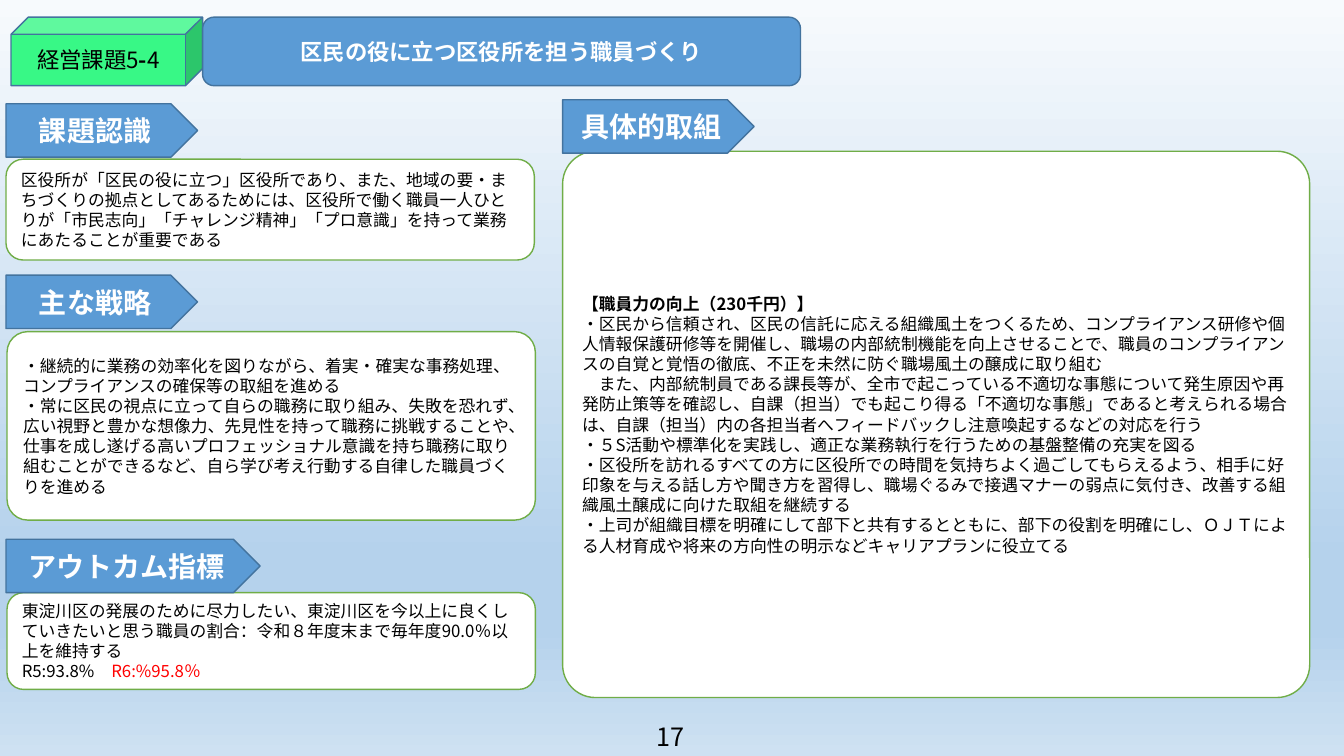
"""Build the slide on staff development at the ward office."""
from lxml import etree
from pptx import Presentation, util as u
from pptx.dml.color import RGBColor
from pptx.enum import shapes, text
from pptx.oxml.ns import qn

FONT = "Noto Sans CJK JP"
BLACK = RGBColor(0x00, 0x00, 0x00)
WHITE = RGBColor(0xFF, 0xFF, 0xFF)
RED = RGBColor(0xFF, 0x00, 0x00)
BLUE = RGBColor(0x5B, 0x9B, 0xD5)
NAVY = RGBColor(0x43, 0x73, 0x9E)
LIME = RGBColor(0x38, 0xF8, 0x86)
GREEN = RGBColor(0x70, 0xAD, 0x47)
SKY = [(0, "F7FAFD"), (74, "B5D2EC"), (83, "B5D2EC"), (100, "CEE1F2")]

LEFT, RIGHT = 0.06, 5.58
BOX_W, TAG_W, TAG_H = 5.24, 1.9, 0.53
TOP, TOP_H = 0.17, 0.68
CUBE_X = 0.11
TITLE_X = CUBE_X + TAG_W
SHAPE = shapes.MSO_SHAPE


def write(tf, paragraphs, size, color, bold=False, align=text.PP_ALIGN.LEFT):
    tf.text = "\n".join(paragraphs)
    for p in tf.paragraphs:
        p.alignment = align
        for r in p.runs:
            style(r, size, color, bold)


def style(r, size, color, bold):
    r.font.size, r.font.bold = u.Pt(size), bold
    r.font.color.rgb = color
    r.font.name = FONT
    etree.SubElement(r.font._element, qn("a:ea"), typeface=FONT)


prs = Presentation()
prs.slide_width, prs.slide_height = u.Inches(13.33), u.Inches(7.5)
s = prs.slides.add_slide(prs.slide_layouts[6])

fill = s.background.fill
fill.gradient()
fill.gradient_angle = 270
stops = s.element.find(".//" + qn("a:gsLst"))
for stop in list(stops):
    stops.remove(stop)
for share, color in SKY:
    stop = etree.SubElement(stops, qn("a:gs"), pos=str(share * 1000))
    etree.SubElement(stop, qn("a:srgbClr"), val=color)

issue = ["区役所が「区民の役に立つ」区役所であり、また、地域の要・まちづくりの拠点としてあるためには、区役所で働く職員一人ひとりが「市民志向」「チャレンジ精神」「プロ意識」を持って業務にあたることが重要である"]
outcome = [
    "東淀川区の発展のために尽力したい、東淀川区を今以上に良くしていきたいと思う職員の割合：令和８年度末まで毎年度90.0％以上を維持する",
    "R5:93.8%　",
]
strategy = [
    "・継続的に業務の効率化を図りながら、着実・確実な事務処理、コンプライアンスの確保等の取組を進める",
    "・常に区民の視点に立って自らの職務に取り組み、失敗を恐れず、広い視野と豊かな想像力、先見性を持って職務に挑戦することや、仕事を成し遂げる高いプロフェッショナル意識を持ち職務に取り組むことができるなど、自ら学び考え行動する自律した職員づくりを進める",
]
actions = [
    "【職員力の向上（230千円）】",
    "・区民から信頼され、区民の信託に応える組織風土をつくるため、コンプライアンス研修や個人情報保護研修等を開催し、職場の内部統制機能を向上させることで、職員のコンプライアンスの自覚と覚悟の徹底、不正を未然に防ぐ職場風土の醸成に取り組む",
    "　また、内部統制員である課長等が、全市で起こっている不適切な事態について発生原因や再発防止策等を確認し、自課（担当）でも起こり得る「不適切な事態」であると考えられる場合は、自課（担当）内の各担当者へフィードバックし注意喚起するなどの対応を行う",
    "・５S活動や標準化を実践し、適正な業務執行を行うための基盤整備の充実を図る",
    "・区役所を訪れるすべての方に区役所での時間を気持ちよく過ごしてもらえるよう、相手に好印象を与える話し方や聞き方を習得し、職場ぐるみで接遇マナーの弱点に気付き、改善する組織風土醸成に向けた取組を継続する",
    "・上司が組織目標を明確にして部下と共有するとともに、部下の役割を明確にし、ＯＪＴによる人材育成や将来の方向性の明示などキャリアプランに役立てる",
]

boxes = {}
for name, x, y, w, h, corner, paragraphs in [
    ("issue", LEFT, 1.58, BOX_W, 1, 0.17, issue),
    ("outcome", LEFT + 0.01, 5.88, BOX_W, 0.96, 0.17, outcome),
    ("strategy", LEFT + 0.01, 3.29, BOX_W, 1.87, 0.11, strategy),
    ("actions", RIGHT, 1.5, 7.41, 5.42, 0.06, actions),
]:
    sp = s.shapes.add_shape(SHAPE.ROUNDED_RECTANGLE, *map(u.Inches, (x, y, w, h)))
    sp.adjustments[0] = corner
    sp.shadow.inherit = False
    sp.fill.solid()
    sp.fill.fore_color.rgb = WHITE
    sp.line.color.rgb, sp.line.width = GREEN, u.Pt(1)
    write(sp.text_frame, paragraphs, 12, BLACK)
    boxes[name] = sp.text_frame

boxes["actions"].paragraphs[0].runs[0].font.bold = True
r = boxes["outcome"].paragraphs[1].add_run()
r.text = "R6:%95.8％"
style(r, 12, RED, False)

for kind, x, y, w, h, color, label, size, ink, bold in [
    (SHAPE.PENTAGON, LEFT, 2.73, TAG_W, TAG_H, BLUE, "主な戦略", 20, WHITE, True),
    (SHAPE.PENTAGON, LEFT, 5.35, 2.52, TAG_H, BLUE, "アウトカム指標", 20, WHITE, True),
    (SHAPE.PENTAGON, LEFT, 1.03, TAG_W, TAG_H, BLUE, "課題認識", 20, WHITE, True),
    (SHAPE.PENTAGON, RIGHT, 0.99, TAG_W, TAG_H, BLUE, "具体的取組", 20, WHITE, True),
    (SHAPE.CUBE, CUBE_X, TOP, TAG_W, TOP_H, LIME, "経営課題5", 16, BLACK, False),
    (SHAPE.ROUNDED_RECTANGLE, TITLE_X, TOP, 5.93, TOP_H, BLUE,
     "区民の役に立つ区役所を担う職員づくり", 16, WHITE, True),
]:
    sp = s.shapes.add_shape(kind, *map(u.Inches, (x, y, w, h)))
    sp.shadow.inherit = False
    sp.fill.solid()
    sp.fill.fore_color.rgb = color
    sp.line.color.rgb, sp.line.width = NAVY, u.Pt(1)
    write(sp.text_frame, [label], size, ink, bold, text.PP_ALIGN.CENTER)
    if kind == SHAPE.CUBE:
        for part, heavy in [("-", True), ("4", False)]:
            r = sp.text_frame.paragraphs[0].add_run()
            r.text = part
            style(r, size, ink, heavy)

sp = s.shapes.add_textbox(*map(u.Inches, (6.41, 7.11, 0.51, 0.4)))
sp.text_frame.word_wrap = True
write(sp.text_frame, ["17"], 18, BLACK)

prs.save("out.pptx")
